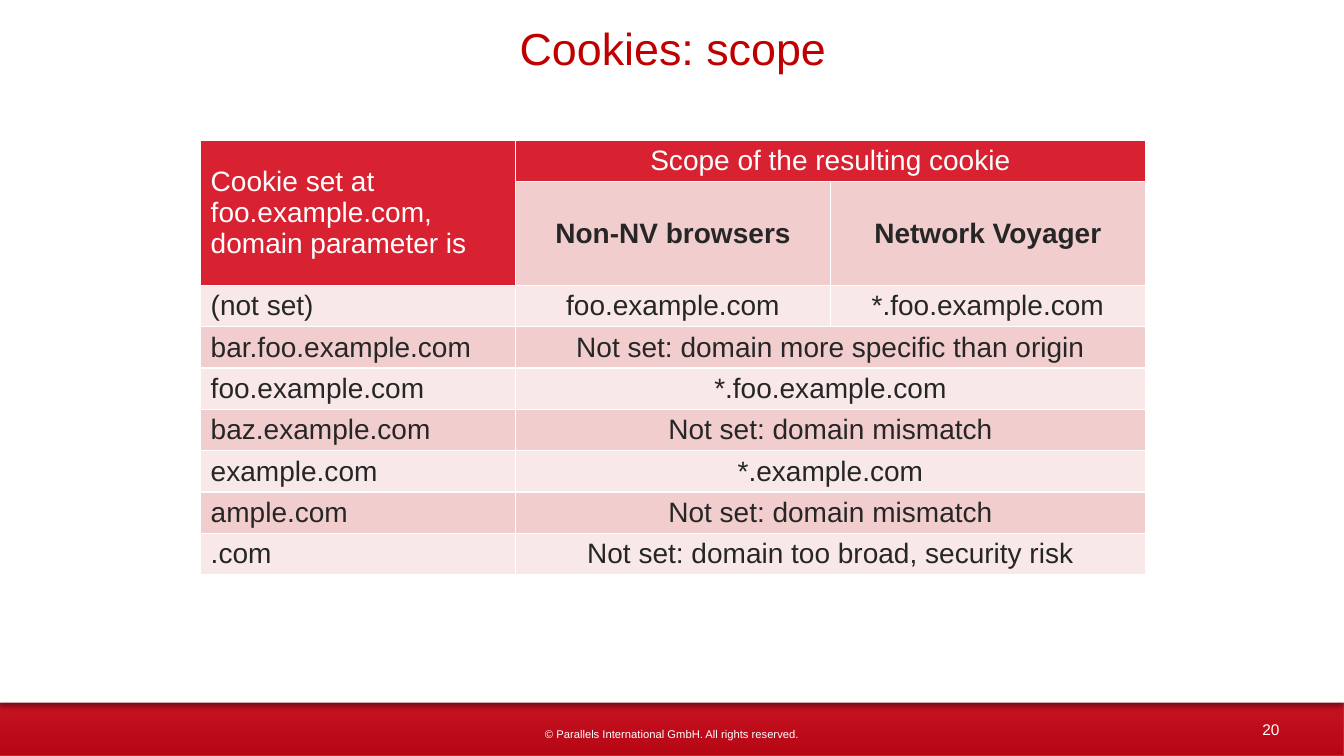
from dataclasses import dataclass

from lxml import etree
from pptx import Presentation
from pptx.dml.color import RGBColor
from pptx.enum import shapes, text
from pptx.oxml import ns
from pptx.util import Inches, Pt


@dataclass(frozen=True)
class Theme:
    font: str = "Arial"
    white: str = "FFFFFF"
    ink: str = "262626"
    title: str = "C00000"
    red: str = "D92231"
    deep_red: str = "B60513"
    edge_red: str = "D91D2C"
    band_dark: str = "F1CDCE"
    band_light: str = "F8E8E8"
    title_size: int = 32
    table_size: int = 20
    number_size: int = 11
    copyright_size: int = 8


THEME = Theme()
TITLE_ROWS = [
    ["Cookie set at foo.example.com,\ndomain parameter is", "Scope of the resulting cookie"],
    [None, "Non-NV browsers", "Network Voyager"],
]
SCOPE_ROWS = [
    ["(not set)", "foo.example.com", "*.foo.example.com"],
    ["bar.foo.example.com", "Not set: domain more specific than origin"],
    ["foo.example.com", "*.foo.example.com"],
    ["baz.example.com", "Not set: domain mismatch"],
    ["example.com", "*.example.com"],
    ["ample.com", "Not set: domain mismatch"],
    [".com", "Not set: domain too broad, security risk"],
]


def color(value):
    return RGBColor.from_string(value)


def write(frame, words, size, ink, centered=True, bold=False):
    frame.text = words
    frame.word_wrap = True
    frame.vertical_anchor = text.MSO_ANCHOR.MIDDLE
    for paragraph in frame.paragraphs:
        paragraph.alignment = text.PP_ALIGN.CENTER if centered else text.PP_ALIGN.LEFT
        paragraph.font.name = THEME.font
        paragraph.font.size = Pt(size)
        paragraph.font.bold = bold
        paragraph.font.color.rgb = color(ink)


def add_panel(slide, left, top, width, height):
    panel = slide.shapes.add_shape(
        shapes.MSO_SHAPE.RECTANGLE, Inches(left), Inches(top), Inches(width), Inches(height))
    panel.shadow.inherit = False
    return panel


def add_label(slide, words, size, left, top, width, height):
    label = slide.shapes.add_textbox(Inches(left), Inches(top), Inches(width), Inches(height))
    frame = label.text_frame
    frame.margin_top = frame.margin_bottom = 0
    write(frame, words, size, THEME.white)


def add_background(slide, width, height, footer_height):
    # Red bar, mostly covered by the white page above it
    bar_height = 1.25
    bar = add_panel(slide, 0, height - bar_height, width, bar_height)
    bar.fill.gradient()
    bar.fill.gradient_angle = 90
    for stop, (position, shade) in zip(
            bar.fill.gradient_stops, [(0, THEME.deep_red), (0.8, THEME.red)]):
        stop.position = position
        stop.color.rgb = color(shade)
    bar.line.color.rgb = color(THEME.edge_red)
    bar.line.width = Pt(0.75)

    # White page, casting a shadow on the bar
    page = add_panel(slide, 0, 0, width, height - footer_height)
    page.fill.solid()
    page.fill.fore_color.rgb = color(THEME.white)
    page.line.fill.background()
    effects = page._element.spPr.find(ns.qn("a:effectLst"))
    shadow = etree.SubElement(effects, ns.qn("a:outerShdw"), blurRad=str(Pt(4)),
                              dist=str(Pt(3)), dir="5400000", rotWithShape="0")
    black = etree.SubElement(shadow, ns.qn("a:srgbClr"), val="000000")
    etree.SubElement(black, ns.qn("a:alpha"), val="40000")


def add_footer(slide, left, top, width):
    add_label(slide, "20", THEME.number_size, left + width - 1, top + 0.11, 0.55, 0.31)
    add_label(slide, "© Parallels International GmbH. All rights reserved.",
              THEME.copyright_size, left + (width - 3.09) / 2, top + 0.25, 3.09, 0.13)


def add_title(slide, left, top, width, height):
    title = slide.shapes.title
    # Bring the title in front of the white page
    slide.shapes._spTree.append(title._element)
    title.left, title.top = Inches(left), Inches(top)
    title.width, title.height = Inches(width), Inches(height)
    write(title.text_frame, "Cookies: scope", THEME.title_size, THEME.title)


def set_borders(cell):
    properties = cell._tc.get_or_add_tcPr()
    for index, side in enumerate(["a:lnL", "a:lnR", "a:lnT", "a:lnB"]):
        line = etree.Element(ns.qn(side), w=str(Pt(1)))
        fill = etree.SubElement(line, ns.qn("a:solidFill"))
        etree.SubElement(fill, ns.qn("a:srgbClr"), val=THEME.white)
        properties.insert(index, line)


def add_scope_table(slide, left, top, width, height, row_height):
    rows = TITLE_ROWS + SCOPE_ROWS
    table = slide.shapes.add_table(
        len(rows), 3, Inches(left), Inches(top), Inches(width), Inches(height)).table
    for row in table.rows:
        row.height = Inches(row_height)

    # Fills and borders
    for r in range(len(rows)):
        for c in range(3):
            cell = table.cell(r, c)
            header = r == 0 or (r == 1 and c == 0)
            band = THEME.band_dark if r % 2 else THEME.band_light
            cell.fill.solid()
            cell.fill.fore_color.rgb = color(THEME.red if header else band)
            set_borders(cell)

    # Merged cells: a two-row corner, and results shared by both browsers
    table.cell(0, 0).merge(table.cell(1, 0))
    for r, row in enumerate(rows):
        if len(row) == 2:
            table.cell(r, 1).merge(table.cell(r, 2))
        for c, words in enumerate(row):
            if words is None:
                continue
            cell = table.cell(r, c)
            write(cell.text_frame, words, THEME.table_size,
                  THEME.white if r == 0 else THEME.ink, centered=c > 0, bold=r == 1)
            cell.vertical_anchor = text.MSO_ANCHOR.MIDDLE


def main():
    presentation = Presentation()
    width, height, footer_height = 13.33, 7.5, 0.53
    presentation.slide_width, presentation.slide_height = Inches(width), Inches(height)
    slide = presentation.slides.add_slide(presentation.slide_layouts[5])

    add_background(slide, width, height, footer_height)
    add_footer(slide, 0, height - footer_height, width)
    add_title(slide, 0.43, 0.15, 12.49, 0.64)
    add_scope_table(slide, 1.99, 1.39, 9.37, 4.13, 0.41)
    presentation.save("out.pptx")


if __name__ == "__main__":
    main()
